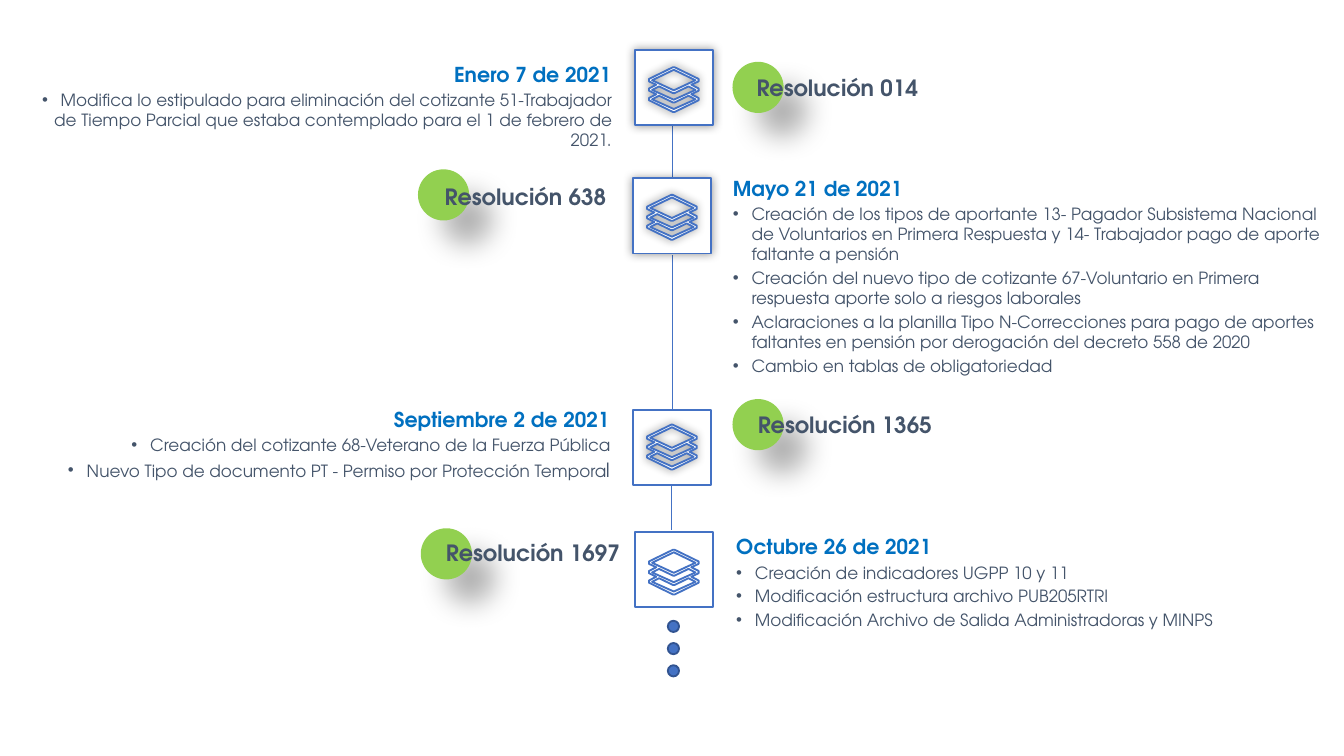
from dataclasses import dataclass

from lxml.etree import SubElement
from pptx import Presentation
from pptx.dml.color import RGBColor
from pptx.enum.shapes import MSO_CONNECTOR, MSO_SHAPE
from pptx.enum.text import MSO_ANCHOR, MSO_AUTO_SIZE, PP_ALIGN
from pptx.oxml.ns import qn
from pptx.util import Pt


@dataclass(frozen=True)
class Theme:
    face: str = "TeX Gyre Adventor"
    white: str = "FFFFFF"
    blue: str = "4472C4"
    navy: str = "325491"
    green: str = "92D050"
    date: str = "0070C0"
    ink: str = "44546A"
    head: float = 11
    body: float = 9
    label: float = 12
    glow: tuple = (40, 5, 0, 0)
    drop: tuple = (30, 15, 18, 45)


def color(code):
    return RGBColor.from_string(code)


def apply(target, values):
    for name, value in values.items():
        setattr(target, name, value)


def mirror(side):
    """Close a right-hand outline with its left-hand reflection."""
    return side + [(-x, y) for x, y in reversed(side)]


RIM = mirror([(0.4, 0), (13.3, 6.3), (13.3, 7.6), (9.4, 9.4), (13.3, 11.4),
              (13.3, 12.6), (9.4, 14.5), (13.3, 16.5), (13.3, 17.7), (0.4, 24)])
TOP = [(0, 1.4), (11.6, 7), (0, 12.4), (-11.6, 7)]
BAND = mirror([(0.4, 13.9), (7.9, 10.3), (11.6, 12.2), (0, 17.4)])
LOW = [(x, y + 5) for x, y in BAND]


class Board:
    def __init__(self, slide, theme):
        self.slide, self.theme = slide, theme
        self.shapes = slide.shapes

    def paint(self, shape, fill, line=None, shadow=None):
        shape.fill.solid()
        shape.fill.fore_color.rgb = color(fill)
        if line:
            shape.line.color.rgb = color(line)
            shape.line.width = Pt(1)
        else:
            shape.line.fill.background()
        shape.shadow.inherit = False
        if shadow:
            alpha, blur, dist, angle = shadow
            effects = shape._element.spPr.find(qn("a:effectLst"))
            outer = SubElement(effects, qn("a:outerShdw"), blurRad=str(Pt(blur)),
                               dist=str(Pt(dist)), dir=str(angle * 60000),
                               algn="ctr", rotWithShape="0")
            tint = SubElement(outer, qn("a:srgbClr"), val="000000")
            SubElement(tint, qn("a:alpha"), val=str(alpha * 1000))

    def line(self, x, top, end):
        link = self.shapes.add_connector(MSO_CONNECTOR.STRAIGHT,
                                         Pt(x), Pt(top), Pt(x), Pt(end))
        link.line.color.rgb = color(self.theme.blue)
        link.line.width = Pt(0.5)
        SubElement(link._element.spPr, qn("a:effectLst"))

    def disc(self, x, y, size, fill, line=None, shadow=None):
        disc = self.shapes.add_shape(MSO_SHAPE.OVAL, Pt(x), Pt(y), Pt(size), Pt(size))
        self.paint(disc, fill, line, shadow)

    def node(self, x, y, top, frame, icon):
        """Draw a framed stack icon; frame and icon are their shadows."""
        theme, wide, high = self.theme, 40.3, 41.8
        box = self.shapes.add_shape(MSO_SHAPE.RECTANGLE, Pt(x - wide / 2),
                                    Pt(y - high / 2), Pt(wide), Pt(high))
        box.rotation = 90
        self.paint(box, theme.white, theme.blue, frame)
        pen = None
        for ring in (RIM, TOP, BAND, LOW):
            start, *rest = [(Pt(a), Pt(b)) for a, b in ring]
            if pen:
                pen.move_to(*start)
            else:
                pen = self.shapes.build_freeform(*start)
            pen.add_line_segments(rest, close=True)
        self.paint(pen.convert_to_shape(Pt(x), Pt(top)), theme.white, theme.blue, icon)

    def frame(self, x, y, wide, high, style):
        frame = self.shapes.add_textbox(Pt(x), Pt(y), Pt(wide), Pt(high)).text_frame
        apply(frame, {"word_wrap": True,
                      "auto_size": MSO_AUTO_SIZE.SHAPE_TO_FIT_TEXT, **style})
        return frame

    def run(self, para, text, size, shade, bold=False):
        run = para.add_run()
        run.text = text
        apply(run.font, {"name": self.theme.face, "size": Pt(size), "bold": bold})
        run.font.color.rgb = color(shade)

    def badge(self, spot, place, text):
        theme = self.theme
        self.disc(*spot, 27.4, theme.green, shadow=theme.drop)
        frame = self.frame(*place, 21.6, {"vertical_anchor": MSO_ANCHOR.MIDDLE})
        self.run(frame.paragraphs[0], text, theme.label, theme.ink, True)

    def note(self, place, align, date, items):
        """Write a date over bullets and return the last paragraph."""
        theme = self.theme
        frame = self.frame(*place, {"margin_left": Pt(13), "margin_right": Pt(13),
                                    "margin_top": Pt(6.5), "margin_bottom": Pt(6.5)})
        para = frame.paragraphs[0]
        apply(para, {"alignment": align, "line_spacing": 1.2})
        self.run(para, date, theme.head, theme.date, True)
        for item in items:
            para = frame.add_paragraph()
            apply(para, {"alignment": align, "space_before": Pt(1.8)})
            props = para._p.get_or_add_pPr()
            props.set("marL", str(Pt(10)))
            props.set("indent", str(-Pt(10)))
            SubElement(props, qn("a:buFont"), typeface="Arial")
            SubElement(props, qn("a:buChar"), char="•")
            self.run(para, item, theme.body, theme.ink)
        return para


def main():
    deck = Presentation()
    apply(deck, {"slide_width": Pt(720), "slide_height": Pt(405)})
    theme = Theme()
    board = Board(deck.slides.add_slide(deck.slide_layouts[6]), theme)
    left, right = PP_ALIGN.LEFT, PP_ALIGN.RIGHT

    for stem in ((360, 55.4, 135.4), (360, 136.8, 218.9), (359.5, 260.6, 283.7)):
        board.line(*stem)

    glow = theme.glow
    for node in ((361, 46.8, 36, glow, glow), (360, 115.7, 104.4, glow, glow),
                 (360, 239.6, 227.5, None, glow), (361, 305, 294.5, None, None)):
        board.node(*node)

    for step in range(3):
        board.disc(357.8, 332.6 + 11.9 * step, 6, theme.blue, theme.navy)

    badges = (
        ((392.4, 33.1), (398.2, 36, 127.4), "Resolución 014"),
        ((223.9, 90.7), (231.1, 94.3, 177.1), "Resolución 638"),
        ((392.4, 213.8), (398.9, 216.7, 177.1), "Resolución 1365"),
        ((225.4, 283), (231.8, 285.1, 177.1), "Resolución 1697"),
    )
    for badge in badges:
        board.badge(*badge)

    board.note((2.9, 23.8, 337.7, 64.1), right, "Enero 7 de 2021", [
        "Modifica lo estipulado para eliminación del cotizante 51-Trabajador de "
        "Tiempo Parcial que estaba contemplado para el 1 de febrero de 2021."])
    board.note((379.6, 85, 340.4, 125.3), left, "Mayo 21 de 2021", [
        "Creación de los tipos de aportante 13- Pagador Subsistema Nacional de "
        "Voluntarios en Primera Respuesta y 14- Trabajador pago de aporte "
        "faltante a pensión",
        "Creación del nuevo tipo de cotizante 67-Voluntario en Primera respuesta "
        "aporte solo a riesgos laborales",
        "Aclaraciones a la planilla Tipo N-Correcciones para pago de aportes "
        "faltantes en pensión por derogación del decreto 558 de 2020",
        "Cambio en tablas de obligatoriedad"])
    last = board.note((-0.7, 208.8, 340.4, 57.6), right, "Septiembre 2 de 2021", [
        "Creación del cotizante 68-Veterano de la Fuerza Pública",
        "Nuevo Tipo de documento PT - Permiso por Protección Tempora"])
    board.run(last, "l", 10.5, theme.ink)
    board.note((381.4, 277.2, 340.4, 83.5), left, "Octubre 26 de 2021", [
        "Creación de indicadores UGPP 10 y 11",
        "Modificación estructura archivo PUB205RTRI",
        "Modificación Archivo de Salida Administradoras y MINPS"])

    deck.save("out.pptx")


if __name__ == "__main__":
    main()
